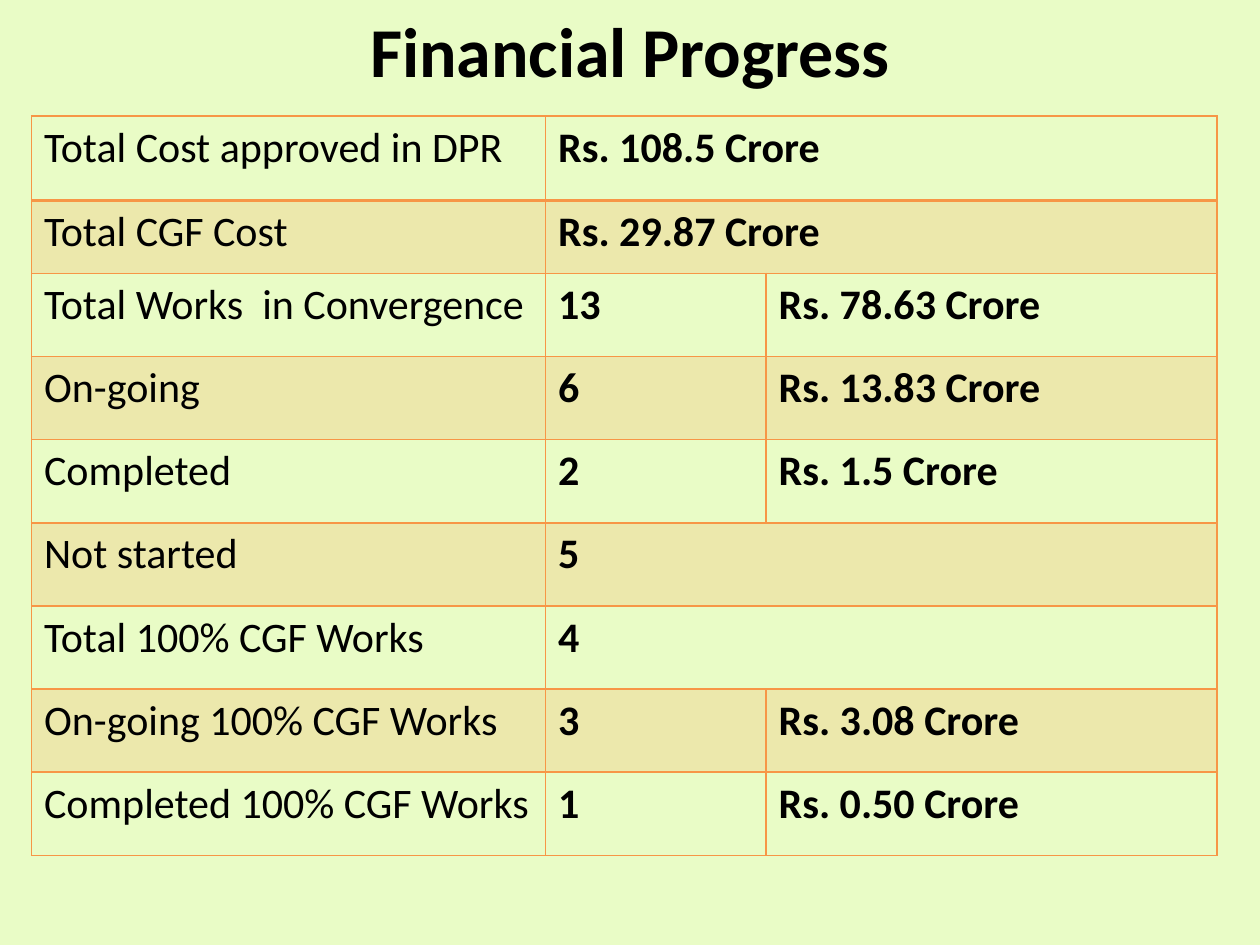
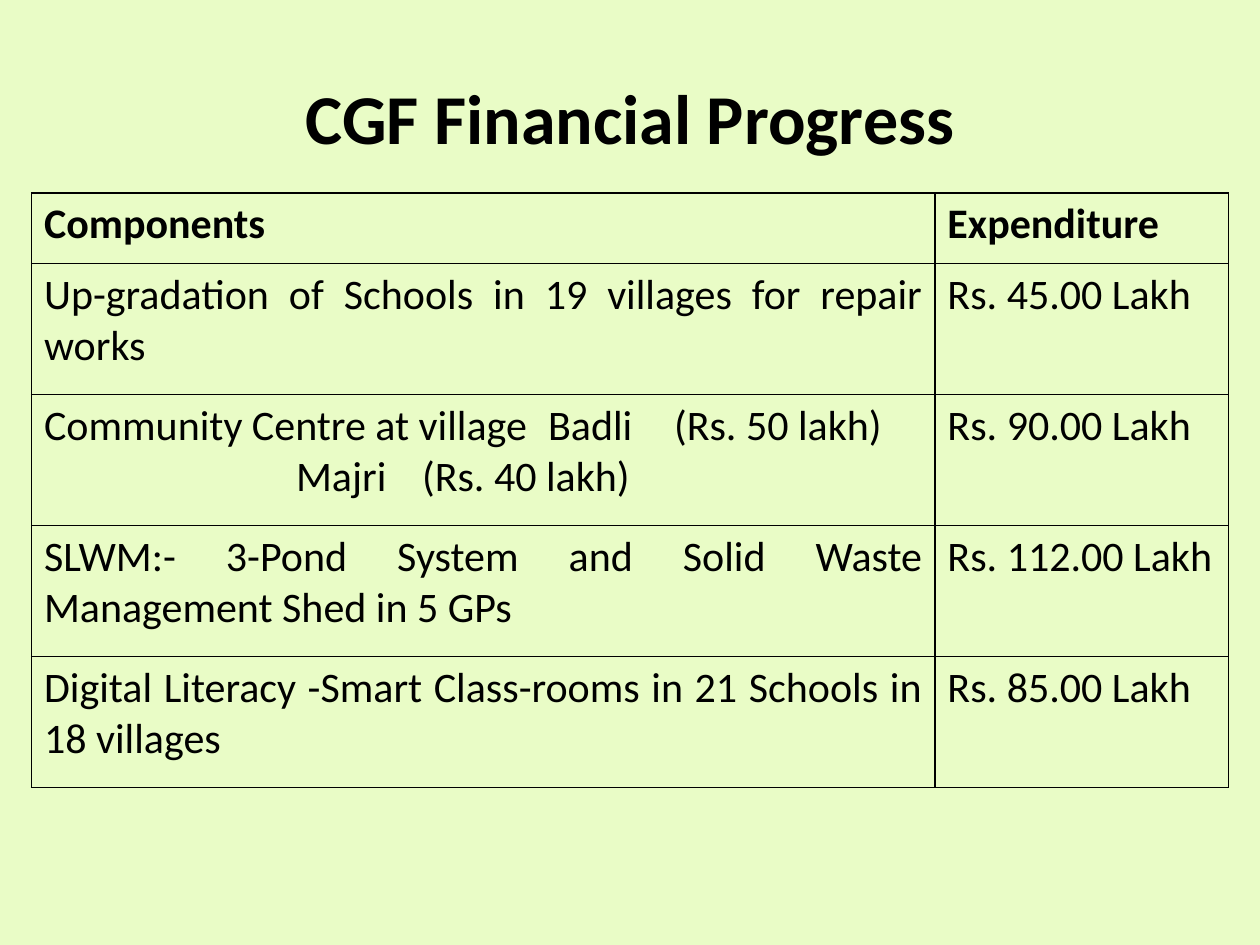
from dataclasses import dataclass

from lxml.etree import SubElement
from pptx import Presentation
from pptx.dml.color import RGBColor
from pptx.enum.text import MSO_ANCHOR, PP_ALIGN
from pptx.oxml.ns import qn
from pptx.slide import Slide
from pptx.table import _Cell
from pptx.text.text import _Paragraph
from pptx.util import Emu, Inches, Pt

# The 10 x 7.5 inch slide is a grid of 40 columns by 30 rows
GRID_COLUMNS, GRID_ROWS = 40, 30
UNIT = Inches(0.25)


@dataclass(frozen=True)
class Theme:
    font: str = "Calibri"
    title_size: int = 40
    body_size: int = 24
    text: str = "000000"
    background: str = "E9FCC6"
    band: str = "ECE8AC"
    orange: str = "F79646"
    black: str = "000000"


THEME = Theme()


@dataclass(frozen=True)
class Line:
    text: str
    bold: bool = False
    justified: bool = False
    indent: float = 0


@dataclass(frozen=True)
class TitleBox:
    text: str
    left: float
    top: float
    width: float
    height: float


@dataclass(frozen=True)
class TableSpec:
    top: float
    columns: list[float]
    rows: list[float]
    cells: list[list[list[Line]]]  # a short row merges its last cell to the edge
    border: str
    banded: bool = False
    header_rule: float = 1


def grid(units: float) -> Emu:
    return Emu(round(units * UNIT))


def write_line(paragraph: _Paragraph, line: Line, size: int) -> None:
    run = paragraph.add_run()
    run.text = line.text
    run.font.name = THEME.font
    run.font.size = Pt(size)
    run.font.bold = line.bold
    run.font.color.rgb = RGBColor.from_string(THEME.text)
    if line.justified:
        paragraph.alignment = PP_ALIGN.JUSTIFY
    if line.indent:
        properties = paragraph._p.get_or_add_pPr()
        properties.set("marL", str(grid(line.indent)))
        properties.set("indent", "0")


def set_borders(cell: _Cell, color: str, top: float, bottom: float) -> None:
    properties = cell._tc.get_or_add_tcPr()
    for side, width in {"L": 1, "R": 1, "T": top, "B": bottom}.items():
        border = SubElement(properties, qn(f"a:ln{side}"), w=str(Pt(width)))
        fill = SubElement(border, qn("a:solidFill"))
        SubElement(fill, qn("a:srgbClr"), val=color)


def add_title(slide: Slide, title: TitleBox) -> None:
    shape = slide.shapes.add_textbox(
        grid(title.left), grid(title.top), grid(title.width), grid(title.height))
    frame = shape.text_frame
    frame.word_wrap = True
    frame.vertical_anchor = MSO_ANCHOR.MIDDLE
    paragraph = frame.paragraphs[0]
    paragraph.alignment = PP_ALIGN.CENTER
    write_line(paragraph, Line(title.text, bold=True), THEME.title_size)


def add_table(slide: Slide, spec: TableSpec) -> None:
    table = slide.shapes.add_table(
        len(spec.rows), len(spec.columns), grid(1), grid(spec.top),
        grid(sum(spec.columns)), grid(sum(spec.rows))).table
    table.first_row = table.horz_banding = False
    for column, width in zip(table.columns, spec.columns):
        column.width = grid(width)
    for row, height in zip(table.rows, spec.rows):
        row.height = grid(height)

    last_column = len(spec.columns) - 1
    for row_index, contents in enumerate(spec.cells):
        # Borders and band of the whole row
        for column_index in range(last_column + 1):
            cell = table.cell(row_index, column_index)
            set_borders(cell, spec.border,
                        top=spec.header_rule if row_index == 1 else 1,
                        bottom=spec.header_rule if row_index == 0 else 1)
            if spec.banded and row_index % 2:
                cell.fill.solid()
                cell.fill.fore_color.rgb = RGBColor.from_string(THEME.band)
            else:
                cell.fill.background()
        if len(contents) <= last_column:
            table.cell(row_index, len(contents) - 1).merge(
                table.cell(row_index, last_column))
        # Text of the row
        for column_index, lines in enumerate(contents):
            frame = table.cell(row_index, column_index).text_frame
            for line_index, line in enumerate(lines):
                paragraph = frame.add_paragraph() if line_index else frame.paragraphs[0]
                write_line(paragraph, line, THEME.body_size)


def progress_row(label: str, *values: str) -> list[list[Line]]:
    return [[Line(label)], *([Line(value, bold=True)] for value in values)]


def justified(text: str) -> list[Line]:
    return [Line(text, justified=True)]


# Slide contents
FINANCIAL_PROGRESS = TableSpec(
    top=3.68,
    columns=[16.32, 7, 14.32],
    rows=[2.68, 2.32] + [2.64] * 7,
    border=THEME.orange,
    banded=True,
    header_rule=2,
    cells=[
        progress_row("Total Cost approved in DPR", "Rs. 108.5 Crore"),
        progress_row("Total CGF Cost", "Rs. 29.87 Crore"),
        progress_row("Total Works  in Convergence", "13", "Rs. 78.63 Crore"),
        progress_row("On-going", "6", "Rs. 13.83 Crore"),
        progress_row("Completed", "2", "Rs. 1.5 Crore"),
        progress_row("Not started", "5"),
        progress_row("Total 100% CGF Works", "4"),
        progress_row("On-going 100% CGF Works", "3", "Rs. 3.08 Crore"),
        progress_row("Completed 100% CGF Works", "1", "Rs. 0.50 Crore"),
    ],
)

CGF_EXPENDITURE = TableSpec(
    top=6.12,
    columns=[28.68, 9.32],
    rows=[2.24] + [4.16] * 4,
    border=THEME.black,
    cells=[
        [[Line("Components", bold=True)], [Line("Expenditure", bold=True)]],
        [justified("Up-gradation of Schools in 19 villages for repair works"),
         [Line("Rs. 45.00 Lakh")]],
        [[Line("Community Centre at village\tBadli\t(Rs. 50 lakh)"),
          Line("Majri\t(Rs. 40 lakh)", indent=8)],
         [Line("Rs. 90.00 Lakh")]],
        [justified("SLWM:- 3-Pond System and Solid Waste Management Shed in 5 GPs"),
         [Line("Rs. 112.00 Lakh")]],
        [justified("Digital Literacy -Smart Class-rooms in 21 Schools in 18 villages"),
         [Line("Rs. 85.00 Lakh")]],
    ],
)

SLIDES = [
    (TitleBox("Financial Progress", 0, 0, GRID_COLUMNS, 3.12), FINANCIAL_PROGRESS),
    (TitleBox("CGF Financial Progress", 2, 1.2, GRID_COLUMNS - 4, 5), CGF_EXPENDITURE),
]


def main() -> None:
    presentation = Presentation()
    presentation.slide_width = grid(GRID_COLUMNS)
    presentation.slide_height = grid(GRID_ROWS)
    for title, table in SLIDES:
        slide = presentation.slides.add_slide(presentation.slide_layouts[6])
        background = slide.background.fill
        background.solid()
        background.fore_color.rgb = RGBColor.from_string(THEME.background)
        add_title(slide, title)
        add_table(slide, table)
    presentation.save("out.pptx")


if __name__ == "__main__":
    main()
